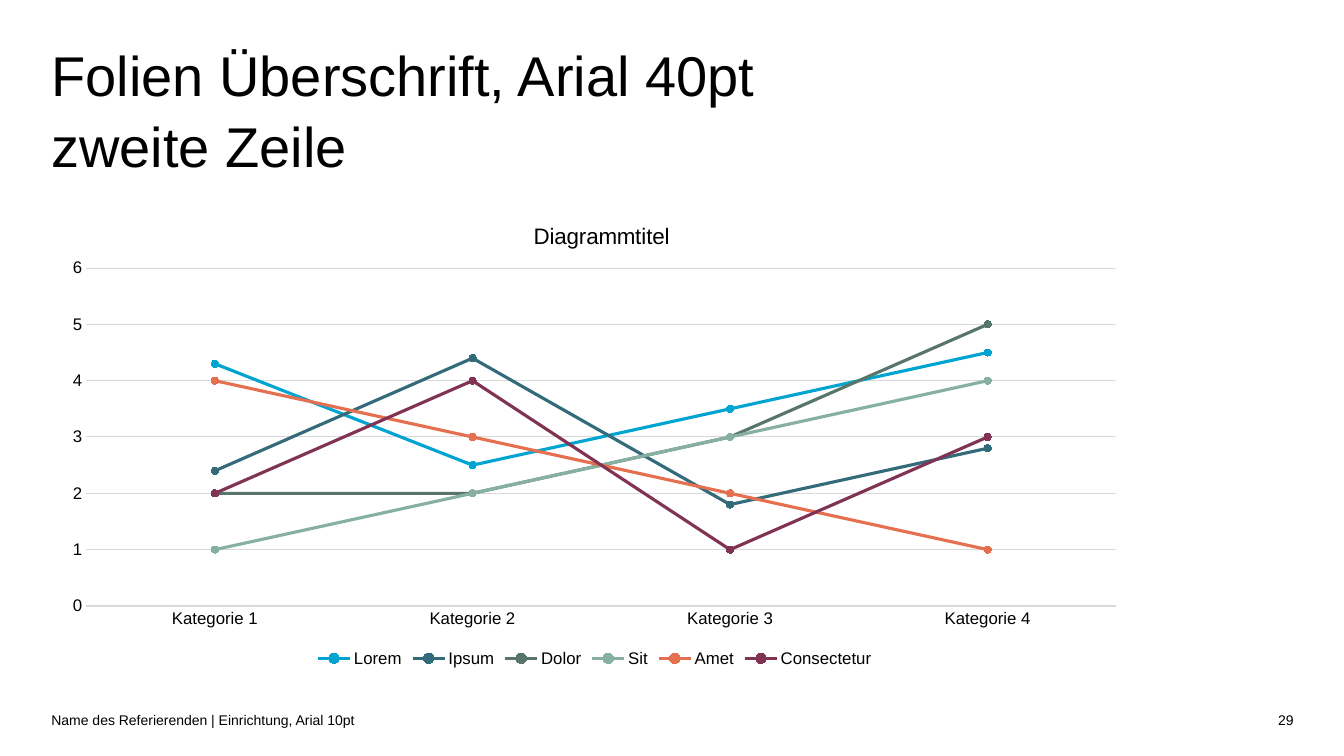
import pptx
import pptx.chart.data
import pptx.dml.color
import pptx.enum.chart
import pptx.enum.text
import pptx.oxml
import pptx.oxml.ns
import pptx.util

RGBColor = pptx.dml.color.RGBColor
BLACK = RGBColor(0x00, 0x00, 0x00)
RULE_GREY = RGBColor(0xD9, 0xD9, 0xD9)
CYAN = RGBColor(0x00, 0xA4, 0xD1)
PETROL = RGBColor(0x33, 0x6B, 0x7A)
MOSS = RGBColor(0x58, 0x75, 0x6A)
SAGE = RGBColor(0x86, 0xB0, 0xA0)
CORAL = RGBColor(0xE5, 0x70, 0x50)
PLUM = RGBColor(0x81, 0x33, 0x53)

FONT = "Arial"
MARGIN, COLUMN = 0.51, 1.54
CATEGORIES = ["Kategorie 1", "Kategorie 2", "Kategorie 3", "Kategorie 4"]
SERIES = [
    ("Lorem", (4.3, 2.5, 3.5, 4.5), CYAN),
    ("Ipsum", (2.4, 4.4, 1.8, 2.8), PETROL),
    ("Dolor", (2, 2, 3, 5), MOSS),
    ("Sit", (1, 2, 3, 4), SAGE),
    ("Amet", (4, 3, 2, 1), CORAL),
    ("Consectetur", (2, 4, 1, 3), PLUM),
]


def area(first_column, columns, top, height):
    """Turn grid columns and vertical inches into a position and size."""
    left = MARGIN + first_column * COLUMN
    return [pptx.util.Inches(n) for n in (left, top, columns * COLUMN, height)]


def style_font(font, size):
    """Apply the slide's regular black typeface."""
    font.name = FONT
    font.size = pptx.util.Pt(size)
    font.bold = False
    font.color.rgb = BLACK


def add_text(slide, place, lines, size, anchor,
             align=pptx.enum.text.PP_ALIGN.LEFT, spacing=1.0):
    """Add an unpadded text box with one run per line."""
    frame = slide.shapes.add_textbox(*place).text_frame
    frame.word_wrap = True
    frame.vertical_anchor = anchor
    frame.margin_left = frame.margin_right = 0
    frame.margin_top = frame.margin_bottom = 0
    paragraph = frame.paragraphs[0]
    paragraph.alignment = align
    paragraph.line_spacing = spacing
    for index, line in enumerate(lines):
        if index:
            paragraph.add_line_break()
        run = paragraph.add_run()
        run.text = line
        style_font(run.font, size)


def set_layout(parent, predecessor, inner=False, **shares):
    """Place a chart part by shares of the chart's size."""
    namespace = pptx.oxml.ns.nsdecls("c")
    target = '<c:layoutTarget val="inner"/>' if inner else ""
    modes = "".join(f'<c:{axis}Mode val="edge"/>' for axis in "xy")
    values = "".join(f'<c:{key} val="{share}"/>' for key, share in shares.items())
    for old in parent.findall(pptx.oxml.ns.qn("c:layout")):
        parent.remove(old)
    layout = pptx.oxml.parse_xml(
        f"<c:layout {namespace}><c:manualLayout>{target}{modes}{values}"
        "</c:manualLayout></c:layout>")
    if predecessor is None:
        parent.insert(0, layout)
    else:
        predecessor.addnext(layout)


def style_axis(axis):
    """Remove the ticks and set the label font of an axis."""
    axis.major_tick_mark = pptx.enum.chart.XL_TICK_MARK.NONE
    axis.minor_tick_mark = pptx.enum.chart.XL_TICK_MARK.NONE
    style_font(axis.tick_labels.font, 12)


def style_rule(line):
    """Draw a thin grey rule."""
    line.color.rgb = RULE_GREY
    line.width = pptx.util.Pt(0.75)


def style_series(series, color):
    """Give a series its straight line and round markers."""
    series.smooth = False
    series.format.line.color.rgb = color
    series.format.line.width = pptx.util.Pt(2.25)
    marker = series.marker
    marker.style = pptx.enum.chart.XL_MARKER_STYLE.CIRCLE
    marker.size = 5
    marker.format.fill.solid()
    marker.format.fill.fore_color.rgb = color
    marker.format.line.color.rgb = color


def add_line_chart(slide, place, heading):
    """Add the titled line chart with its legend."""
    data = pptx.chart.data.CategoryChartData()
    data.categories = CATEGORIES
    for name, values, _ in SERIES:
        data.add_series(name, values)
    kind = pptx.enum.chart.XL_CHART_TYPE.LINE_MARKERS
    chart = slide.shapes.add_chart(kind, *place, data).chart
    style_font(chart.font, 10)
    chart.plots[0].vary_by_categories = False
    for series, (_, _, color) in zip(chart.plots[0].series, SERIES):
        style_series(series, color)

    title = chart.chart_title
    run = title.text_frame.paragraphs[0].add_run()
    run.text = heading
    style_font(run.font, 16)
    title.include_in_layout = False
    title_xml = chart._chartSpace.chart.find(pptx.oxml.ns.qn("c:title"))
    set_layout(title_xml, title_xml.find(pptx.oxml.ns.qn("c:tx")), x=0.44, y=0.04)
    set_layout(chart._chartSpace.chart.plotArea, None, inner=True,
               x=0.032, y=0.147, w=0.948, h=0.715)

    style_axis(chart.category_axis)
    style_rule(chart.category_axis.format.line)
    scale = chart.value_axis
    style_axis(scale)
    scale.minimum_scale, scale.maximum_scale, scale.major_unit = 0, 6, 1
    scale.format.line.fill.background()
    style_rule(scale.major_gridlines.format.line)

    chart.has_legend = True
    chart.legend.position = pptx.enum.chart.XL_LEGEND_POSITION.BOTTOM
    chart.legend.include_in_layout = False
    style_font(chart.legend.font, 12)


def main():
    """Build and save the slide."""
    deck = pptx.Presentation()
    deck.slide_width = pptx.util.Inches(13.33)
    deck.slide_height = pptx.util.Inches(7.5)
    slide = deck.slides.add_slide(deck.slide_layouts[6])
    anchors = pptx.enum.text.MSO_ANCHOR

    add_text(slide, area(0, 8, 0.37, 1.54),
             ["Folien Überschrift, Arial 40pt", "zweite Zeile"],
             40, anchors.TOP, spacing=1.05)
    add_line_chart(slide, area(0, 7, 1.97, 4.69), "Diagrammtitel")
    add_text(slide, area(0, 7, 6.99, 0.31),
             ["Name des Referierenden | Einrichtung, Arial 10pt"],
             10, anchors.MIDDLE)
    add_text(slide, area(7, 1, 6.99, 0.31), ["29"], 10, anchors.MIDDLE,
             pptx.enum.text.PP_ALIGN.RIGHT)
    deck.save("out.pptx")


if __name__ == "__main__":
    main()
